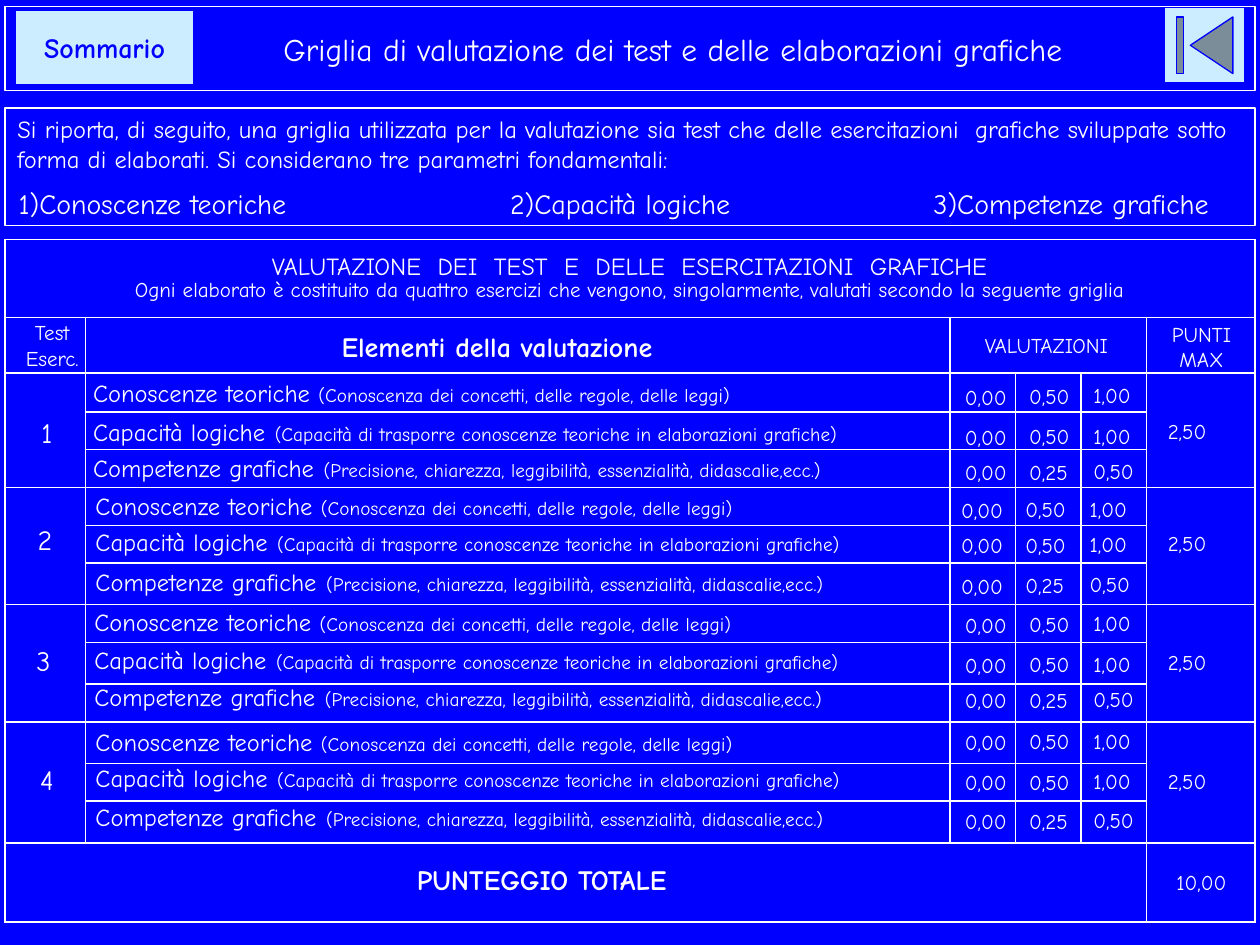
"""Build the slide with the assessment grid for tests and graphic exercises."""
import lxml.etree
import pptx
import pptx.dml.color
import pptx.enum.shapes
import pptx.enum.text
import pptx.oxml.ns
import pptx.util

Inches = pptx.util.Inches
Pt = pptx.util.Pt
qn = pptx.oxml.ns.qn
MIDDLE = pptx.enum.text.MSO_ANCHOR.MIDDLE
CENTER = pptx.enum.text.PP_ALIGN.CENTER
LEFT = pptx.enum.text.PP_ALIGN.LEFT
SHAPES = pptx.enum.shapes.MSO_SHAPE
WHITE = pptx.dml.color.RGBColor(0xFF, 0xFF, 0xFF)
BLUE = pptx.dml.color.RGBColor(0x00, 0x00, 0xFF)
PALE_BLUE = pptx.dml.color.RGBColor(0xCC, 0xEC, 0xFF)
FONT = "Comic Neue"


def write(para, text, size=12, bold=False, color=WHITE, align=LEFT):
    para.alignment = align
    span = para.add_run()
    span.text = text
    span.font.name = FONT
    span.font.size = Pt(size)
    span.font.bold = bold
    span.font.color.rgb = color


def add_box(left, top, width, height):
    box = page.shapes.add_textbox(Inches(left), Inches(top), Inches(width), Inches(height))
    box.text_frame.word_wrap = True
    box.text_frame.auto_size = pptx.enum.text.MSO_AUTO_SIZE.SHAPE_TO_FIT_TEXT
    return box.text_frame.paragraphs[0]


deck = pptx.Presentation()
deck.slide_width = Inches(10)
deck.slide_height = Inches(7.5)
page = deck.slides.add_slide(deck.slide_layouts[5])
page.background.fill.solid()
page.background.fill.fore_color.rgb = BLUE

title = page.shapes.title
title.left, title.top, title.width, title.height = Inches(0.04), Inches(0.05), Inches(9.92), Inches(0.67)
title.line.color.rgb = WHITE
title.line.width = Pt(0.75)
title.text_frame.vertical_anchor = MIDDLE
title.text_frame.margin_left = Inches(0.78)
write(title.text_frame.paragraphs[0], "Griglia di valutazione dei test e delle elaborazioni grafiche",
      size=18, align=CENTER)

row_heights = [0.62, 0.44, 0.31, 0.3, 0.3, 0.3, 0.3, 0.33, 0.3, 0.33, 0.3, 0.33, 0.3, 0.33, 0.63]
column_widths = [0.64, 6.86, 0.52, 0.52, 0.52, 0.86]
grid = page.shapes.add_table(len(row_heights), len(column_widths), Inches(0.04), Inches(1.9),
                             Inches(9.92), Inches(sum(row_heights))).table
grid.first_row = False
grid.horz_banding = False
for row, height in zip(grid.rows, row_heights):
    row.height = Inches(height)
for column, width in zip(grid.columns, column_widths):
    column.width = Inches(width)

for cell in grid.iter_cells():
    cell.vertical_anchor = MIDDLE
    properties = cell._tc.get_or_add_tcPr()
    for side in ("a:lnL", "a:lnR", "a:lnT", "a:lnB"):
        border = lxml.etree.SubElement(properties, qn(side), w=str(Pt(1)))
        fill = lxml.etree.SubElement(border, qn("a:solidFill"))
        lxml.etree.SubElement(fill, qn("a:srgbClr"), val=str(WHITE))
    cell.fill.background()
    if cell is not grid.cell(0, 0) and cell._tc is not grid.cell(0, 0)._tc:
        para = cell.text_frame.paragraphs[0]
        lxml.etree.SubElement(para._p, qn("a:endParaRPr"), sz="1000")

grid.cell(0, 0).merge(grid.cell(0, 5))
grid.cell(1, 2).merge(grid.cell(1, 4))
for first in range(2, 14, 3):
    for column in (0, 5):
        grid.cell(first, column).merge(grid.cell(first + 2, column))
grid.cell(14, 0).merge(grid.cell(14, 4))

heading = grid.cell(0, 0).text_frame
write(heading.paragraphs[0], "VALUTAZIONE  DEI  TEST  E  DELLE  ESERCITAZIONI  GRAFICHE", size=14, align=CENTER)
write(heading.add_paragraph(), "Ogni elaborato è costituito da quattro esercizi che vengono, singolarmente, "
      "valutati secondo la seguente griglia", align=CENTER)
for para in heading.paragraphs:
    para.line_spacing = 0.9

criteria = [
    ("Conoscenze teoriche", 14, "(Conoscenza dei concetti, delle regole, delle leggi)", ["0,00", "0,50", "1,00"]),
    ("Capacità logiche", 16, "(Capacità di trasporre conoscenze teoriche in elaborazioni grafiche)",
     ["0,00", "0,50", "1,00"]),
    ("Competenze grafiche", 16, "(Precisione, chiarezza, leggibilità, essenzialità, didascalie,ecc.)",
     ["0,00", "0,25", "0,50"]),
]
exercises = [
    ("1", 0.23, 3.25, 3.27, 0.64, 7.56, [2.95, 3.23, 3.52], [3.0, 3.32, 3.6]),
    ("2", 0.2, 4.1, 4.16, 0.66, 7.53, [3.85, 4.11, 4.42], [3.9, 4.18, 4.5]),
    ("3", 0.19, 5.06, 5.11, 0.65, 7.56, [4.77, 5.04, 5.34], [4.81, 5.13, 5.41]),
    ("4", 0.22, 6.0, 6.05, 0.66, 7.56, [5.72, 5.98, 6.29], [5.74, 6.06, 6.37]),
]
for number, number_left, number_top, points_top, label_left, score_left, label_tops, score_tops in exercises:
    write(add_box(number_left, number_top, 0.33, 0.37), number, size=16)
    write(add_box(9.17, points_top, 0.66, 0.3), "2,50")
    for (name, gap_size, detail, scores), label_top, score_top in zip(criteria, label_tops, score_tops):
        para = add_box(label_left, label_top, 6.7, 0.33 if gap_size == 14 else 0.37)
        write(para, name, size=14)
        write(para, " ", size=gap_size)
        write(para, detail, size=11)
        for index, score in enumerate(scores):
            write(add_box(score_left + 0.51 * index, score_top - 0.005 * index, 0.6, 0.3), score)

intro = page.shapes.add_shape(SHAPES.RECTANGLE, Inches(0.04), Inches(0.86), Inches(9.92), Inches(0.93))
intro.shadow.inherit = False
intro.fill.background()
intro.line.color.rgb = WHITE
intro.line.width = Pt(1)
intro.text_frame.word_wrap = True
intro.text_frame.vertical_anchor = pptx.enum.text.MSO_ANCHOR.TOP
write(intro.text_frame.paragraphs[0], "Si riporta, di seguito, una griglia utilizzata per la valutazione sia test "
      "che delle esercitazioni  grafiche sviluppate sotto forma di elaborati. "
      "Si considerano tre parametri fondamentali:", size=14)

for text, left, width in [("1)Conoscenze teoriche", 0.05, 2.6), ("2)Capacità logiche", 3.95, 2.1),
                          ("3)Competenze grafiche", 7.31, 2.65)]:
    write(add_box(left, 1.43, width, 0.37), text, size=16)

for text, left, top, width, height, size, bold in [
    ("Test Eserc.", 0.05, 2.49, 0.73, 0.5, 12, False),
    ("Elementi della valutazione", 2.41, 2.57, 3.07, 0.37, 16, True),
    ("VALUTAZIONI", 7.52, 2.59, 1.57, 0.3, 12, False),
    ("PUNTI MAX", 9.09, 2.5, 0.89, 0.5, 12, False),
    ("PUNTEGGIO TOTALE", 2.72, 6.8, 3.16, 0.37, 16, True),
    ("10,00", 9.12, 6.85, 0.83, 0.3, 12, False),
]:
    write(add_box(left, top, width, height), text, size=size, bold=bold, align=CENTER)

for kind, left, top, width, height, text in [
    (SHAPES.ACTION_BUTTON_BEGINNING, 9.24, 0.06, 0.64, 0.6, ""),
    (SHAPES.ACTION_BUTTON_CUSTOM, 0.12, 0.08, 1.42, 0.59, "Sommario"),
]:
    button = page.shapes.add_shape(kind, Inches(left), Inches(top), Inches(width), Inches(height))
    button.shadow.inherit = False
    button.fill.solid()
    button.fill.fore_color.rgb = PALE_BLUE
    button.line.color.rgb = BLUE
    button.line.width = Pt(0)
    if text:
        button.text_frame.vertical_anchor = MIDDLE
        write(button.text_frame.paragraphs[0], text, size=16, bold=True, color=BLUE, align=CENTER)

deck.save("out.pptx")
